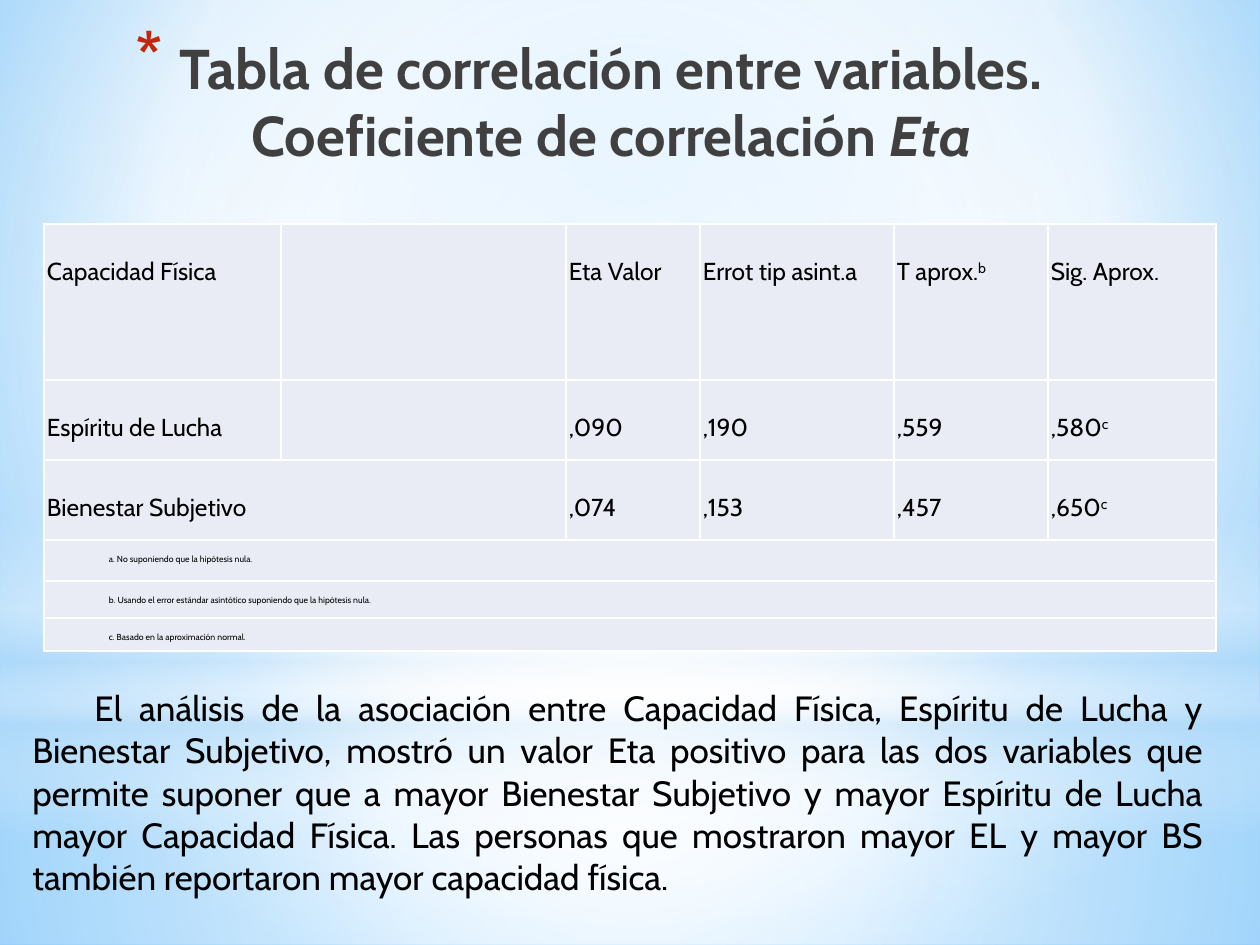
import pptx
import pptx.dml.color
import pptx.enum.shapes
import pptx.enum.text
import pptx.oxml
import pptx.oxml.ns
import pptx.util

SCALE = 914400 / 126
WIDE, HIGH = 1260, 945
ALIGN = pptx.enum.text.PP_ALIGN
SHAPE = pptx.enum.shapes.MSO_SHAPE
NS = pptx.oxml.ns.nsdecls("a")
MID = (50, 50, 50, 50)


def px(num):
    return pptx.util.Emu(round(num * SCALE))


def tint(code):
    return pptx.dml.color.RGBColor.from_string(code)


def blend(stops, focus=None):
    """Gradient of (place, colour, opacity) stops: round a focus, or downward."""
    marks = "".join(
        f'<a:gs pos="{pos * 1000}"><a:srgbClr val="{code}">'
        f'<a:alpha val="{alpha * 1000}"/></a:srgbClr></a:gs>'
        for pos, code, alpha in stops)
    if focus:
        sides = " ".join(f'{side}="{val * 1000}"' for side, val in zip("ltrb", focus))
        way = f'<a:path path="circle"><a:fillToRect {sides}/></a:path>'
    else:
        way = '<a:lin ang="5400000" scaled="0"/>'
    return pptx.oxml.parse_xml(
        f'<a:gradFill {NS} rotWithShape="1"><a:gsLst>{marks}</a:gsLst>{way}</a:gradFill>')


def swap(root, grad):
    """Put a gradient in the place of the first solid fill."""
    old = root.find(".//" + pptx.oxml.ns.qn("a:solidFill"))
    old.getparent().replace(old, grad)


class Page:
    font = "Cabin"
    ink = "000000"
    cell = "E9EBF5"
    rule = "FFFFFF"

    def __init__(self, deck):
        self.slide = deck.slides.add_slide(deck.slide_layouts[6])
        self.shapes = self.slide.shapes

    def back(self, stops, focus):
        self.slide.background.fill.solid()
        swap(self.slide.element, blend(stops, focus))

    def glow(self, kind, box, stops, focus=None):
        item = self.shapes.add_shape(kind, *map(px, box))
        item.shadow.inherit = False
        item.line.fill.background()
        item.fill.solid()
        swap(item.element.spPr, blend(stops, focus))

    def words(self, par, parts, size, code=ink, align=ALIGN.JUSTIFY, left=0, first=0):
        """Fill a paragraph with one run for each part and return the runs."""
        par.alignment = align
        props = par._p.get_or_add_pPr()
        props.set("marL", str(px(left)))
        props.set("indent", str(px(first)))
        for part in parts:
            run = par.add_run()
            run.text = part
            run.font.name = self.font
            run.font.size = pptx.util.Pt(size)
            run.font.color.rgb = tint(code)
        return par.runs

    def text(self, box):
        frame = self.shapes.add_textbox(*map(px, box)).text_frame
        frame.word_wrap = True
        return frame

    def title(self, box, parts):
        par = self.text(box).paragraphs[0]
        runs = self.words(par, parts, 32, "404040", ALIGN.CENTER, 44, -44)
        for run in runs:
            run.font.bold = True
        runs[-1].font.italic = True
        for tag in ('buClr {}><a:srgbClr val="C3260C"/></a:buClr>',
                    'buSzPct {} val="128000"/>', 'buChar {} char="*"/>'):
            par._p.pPr.append(pptx.oxml.parse_xml("<a:" + tag.format(NS)))

    def body(self, box, words):
        frame = self.text(box)
        frame.vertical_anchor = pptx.enum.text.MSO_ANCHOR.MIDDLE
        frame.auto_size = pptx.enum.text.MSO_AUTO_SIZE.SHAPE_TO_FIT_TEXT
        self.words(frame.paragraphs[0], [words], 20, first=62)

    def paint(self, cell):
        cell.fill.solid()
        cell.fill.fore_color.rgb = tint(self.cell)
        cell.margin_left = cell.margin_right = px(3)
        cell.margin_top = cell.margin_bottom = px(3)
        for spot, side in enumerate("LRTB"):
            cell._tc.tcPr.insert(spot, pptx.oxml.parse_xml(
                f'<a:ln{side} {NS} w="12700"><a:solidFill>'
                f'<a:srgbClr val="{self.rule}"/></a:solidFill></a:ln{side}>'))

    def table(self, spot, cols, rows, data, notes):
        """Data rows, then full-width notes; ^ marks a superscript, None a merge."""
        size = sum(cols), sum(rows)
        grid = self.shapes.add_table(len(rows), len(cols), *map(px, spot + size)).table
        grid.first_row = grid.horz_banding = False
        for col, wide in zip(grid.columns, cols):
            col.width = px(wide)
        for row, high in zip(grid.rows, rows):
            row.height = px(high)
        lines = data + [[note] + [None] * (len(cols) - 1) for note in notes]
        for r, line in enumerate(lines):
            small = r >= len(data)
            for c, words in enumerate(line):
                cell = grid.cell(r, c)
                self.paint(cell)
                if not words:
                    continue
                par = cell.text_frame.paragraphs[0]
                par.line_spacing = 2.0
                runs = self.words(par, words.split("^"), 5 if small else 14,
                                  first=62 if small else 0)
                for run in runs[1:]:
                    run.font._element.set("baseline", "30000")
            gaps = line.count(None)
            if gaps:
                grid.cell(r, 0).merge(grid.cell(r, gaps))


def main():
    deck = pptx.Presentation()
    deck.slide_width, deck.slide_height = px(WIDE), px(HIGH)
    page = Page(deck)
    white, sky = "FFFFFF", "B4DCFA"

    page.back([(0, "9ED5FF", 100), (60, white, 100), (100, "5BB9FF", 100)],
              (20, 10, 20, 60))
    page.glow(SHAPE.RECTANGLE, (0, 703, WIDE, 242),
              [(0, white, 91), (37, white, 76), (100, sky, 79)], MID)
    page.glow(SHAPE.RECTANGLE, (0, 0, WIDE, 703),
              [(0, white, 89), (48, white, 62), (100, sky, 79)], MID)
    page.glow(SHAPE.RECTANGLE, (0, 519, WIDE, 315),
              [(0, white, 0), (29, white, 30), (45, sky, 40),
               (55, white, 26), (65, sky, 60), (100, white, 0)])
    page.glow(SHAPE.OVAL, (0, 220, WIDE, 703),
              [(0, white, 100), (56, white, 0)], MID)

    page.title((64, 27, 1051, 79),
               ["Tabla de correlación entre variables. Coeficiente de correlación ", "Eta"])
    page.table(
        (44, 224), (237, 285, 134, 194, 154, 168), (156, 80, 80, 41, 37, 33),
        [["Capacidad Física", "", "Eta Valor", "Errot tip asint.a", "T aprox.^b",
          "Sig. Aprox."],
         ["Espíritu de Lucha", "", ",090", ",190", ",559", ",580^c"],
         ["Bienestar Subjetivo", None, ",074", ",153", ",457", ",650^c"]],
        ["a. No suponiendo que la hipótesis nula.",
         "b. Usando el error estándar asintótico suponiendo que la hipótesis nula.",
         "c. Basado en la aproximación normal."])
    page.body(
        (20, 680, 1196, 224),
        "El análisis de la asociación entre Capacidad Física, Espíritu de Lucha y "
        "Bienestar Subjetivo, mostró un valor Eta positivo para las dos variables que "
        "permite suponer que a mayor Bienestar Subjetivo y mayor Espíritu de Lucha "
        "mayor Capacidad Física. Las personas que mostraron mayor EL y mayor BS "
        "también reportaron mayor capacidad física.")
    deck.save("out.pptx")


if __name__ == "__main__":
    main()
